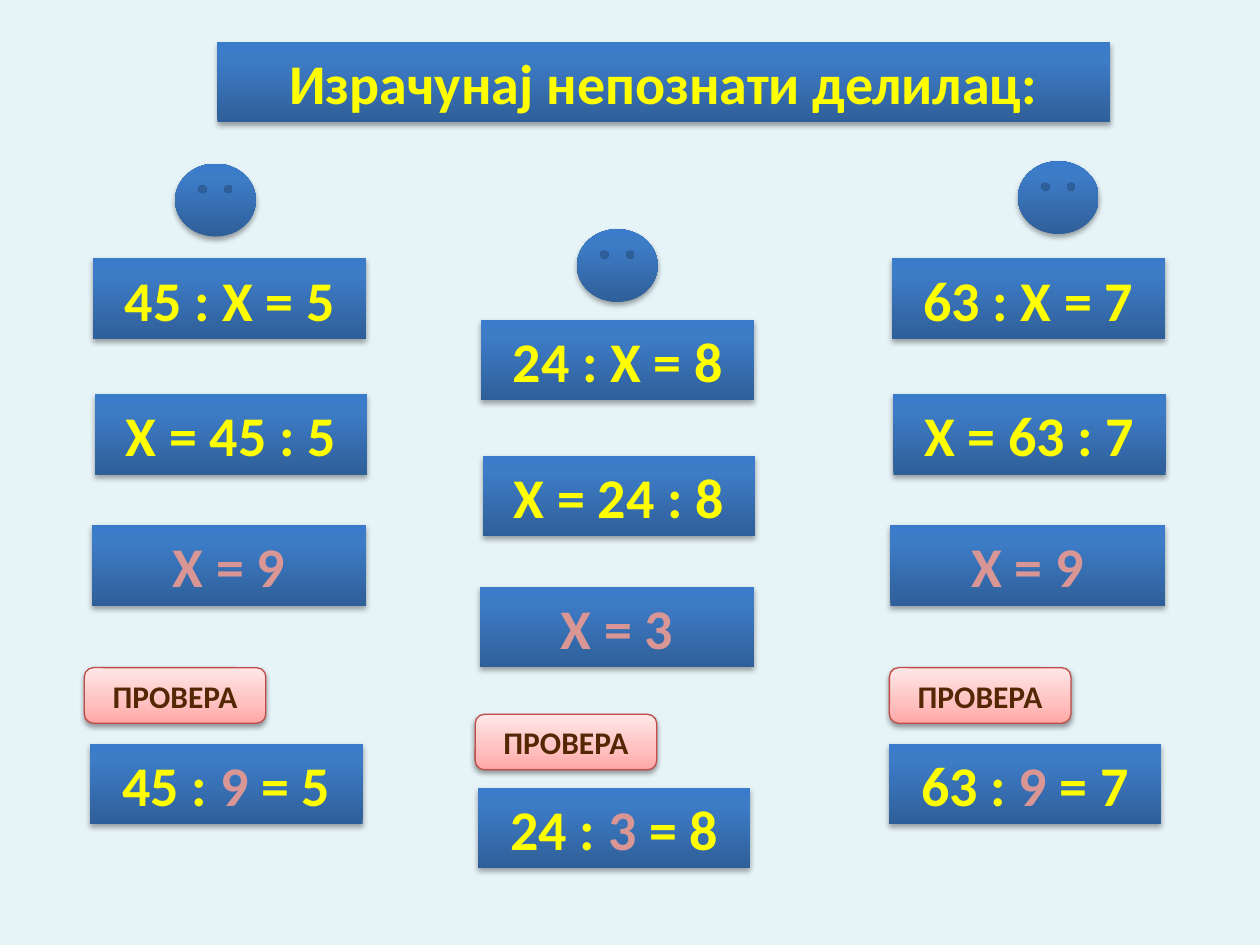
"""Build a slide of division exercises with an unknown divisor."""
from dataclasses import dataclass

from pptx import Presentation
from pptx.dml.color import RGBColor
from pptx.enum.shapes import MSO_SHAPE
from pptx.enum.text import MSO_ANCHOR, MSO_AUTO_SIZE, PP_ALIGN
from pptx.oxml import parse_xml
from pptx.oxml.ns import nsdecls
from pptx.util import Cm, Pt

TITLE = "Израчунај непознати делилац:"
BADGE = "ПРОВЕРА"
TASKS = [
    {"nums": (45, 9, 5), "at": (1.88, 5.21), "face": (3.53, 3.3),
     "badge": (1.7, 13.46), "check": 14.99},
    {"nums": (24, 3, 8), "at": (9.7, 6.45), "face": (11.63, 4.62),
     "badge": (9.58, 14.4), "check": 15.88},
    {"nums": (63, 9, 7), "at": (17.98, 5.21), "face": (20.52, 3.25),
     "badge": (17.93, 13.46), "check": 14.99},
]
HIGH = 1.62


@dataclass(frozen=True)
class Theme:
    """Colours and type sizes."""
    font: str = "Calibri"
    back: str = "E6F3F7"
    text: str = "FFFF00"
    mark: str = "D99694"
    dark: str = "542804"
    edge: str = "BF4C48"
    blue: tuple = ((0, "2F5F99"), (80, "3D7CC7"), (100, "3A7CCB"))
    pink: tuple = ((0, "FFA6A5"), (35, "FFC0BF"), (100, "FFE7E7"))
    big: int = 32
    small: int = 18


LOOK = Theme()


def paint(shape, stops, alpha, edge=None):
    """Give a shape its gradient, outline and shadow."""
    marks = "".join(f'<a:gs pos="{pos * 1000}"><a:srgbClr val="{tone}"/></a:gs>'
                    for pos, tone in stops)
    props = shape.element.spPr
    props.append(parse_xml(
        f'<a:gradFill {nsdecls("a")} rotWithShape="1"><a:gsLst>{marks}</a:gsLst>'
        '<a:lin ang="16200000" scaled="0"/></a:gradFill>'))
    if edge:
        shape.line.color.rgb = RGBColor.from_string(edge)
        shape.line.width = Pt(0.75)
    else:
        shape.line.fill.background()
    props.append(parse_xml(
        f'<a:effectLst {nsdecls("a")}><a:outerShdw blurRad="40000" dist="22000" '
        'dir="5400000" rotWithShape="0"><a:srgbClr val="000000">'
        f'<a:alpha val="{alpha * 1000}"/></a:srgbClr></a:outerShdw></a:effectLst>'))


def write(shape, runs, size):
    """Write centred bold runs of (text, colour)."""
    frame = shape.text_frame
    frame.word_wrap = True
    frame.auto_size = MSO_AUTO_SIZE.NONE
    frame.vertical_anchor = MSO_ANCHOR.MIDDLE
    para = frame.paragraphs[0]
    para.alignment = PP_ALIGN.CENTER
    font = para.font
    font.name, font.size, font.bold = LOOK.font, Pt(size), True
    for text, tone in runs:
        run = para.add_run()
        run.text = text
        run.font.color.rgb = RGBColor.from_string(tone)


def add(slide, kind, *box):
    """Add a preset shape in a box given in centimetres."""
    return slide.shapes.add_shape(kind, *map(Cm, box))


def draw(slide, task):
    """Draw one column: face, steps, badge and check."""
    whole, part, quot = task["nums"]
    left, top = task["at"]
    steps = [
        (0, top, 5.51, [(f"{whole} : Х = {quot}", LOOK.text)]),
        (0.03, top + 2.74, 5.49, [(f"Х = {whole} : {quot}", LOOK.text)]),
        (-0.03, top + 5.38, 5.54, [(f"Х = {part}", LOOK.mark)]),
        (-0.06, task["check"], 5.49, [(f"{whole} : ", LOOK.text),
                                      (f"{part}", LOOK.mark),
                                      (f" = {quot}", LOOK.text)]),
    ]
    for shift, y, wide, runs in steps:
        card = add(slide, MSO_SHAPE.RECTANGLE, left + shift, y, wide, HIGH)
        paint(card, LOOK.blue, 35)
        write(card, runs, LOOK.big)
    face = add(slide, MSO_SHAPE.SMILEY_FACE, *task["face"], 1.63, 1.47)
    paint(face, LOOK.blue, 35)
    badge = add(slide, MSO_SHAPE.ROUNDED_RECTANGLE, *task["badge"], 3.66, 1.12)
    paint(badge, LOOK.pink, 38, LOOK.edge)
    write(badge, [(BADGE, LOOK.dark)], LOOK.small)


def main():
    """Build and save the slide."""
    deck = Presentation()
    deck.slide_width, deck.slide_height = Cm(25.4), Cm(19.05)
    slide = deck.slides.add_slide(deck.slide_layouts[5])
    fill = slide.background.fill
    fill.solid()
    fill.fore_color.rgb = RGBColor.from_string(LOOK.back)
    head = slide.shapes.title
    head.left, head.top, head.width, head.height = map(Cm, (4.38, 0.85, 18, HIGH))
    paint(head, LOOK.blue, 35)
    write(head, [(TITLE, LOOK.text)], LOOK.big)
    for task in TASKS:
        draw(slide, task)
    deck.save("out.pptx")


if __name__ == "__main__":
    main()
